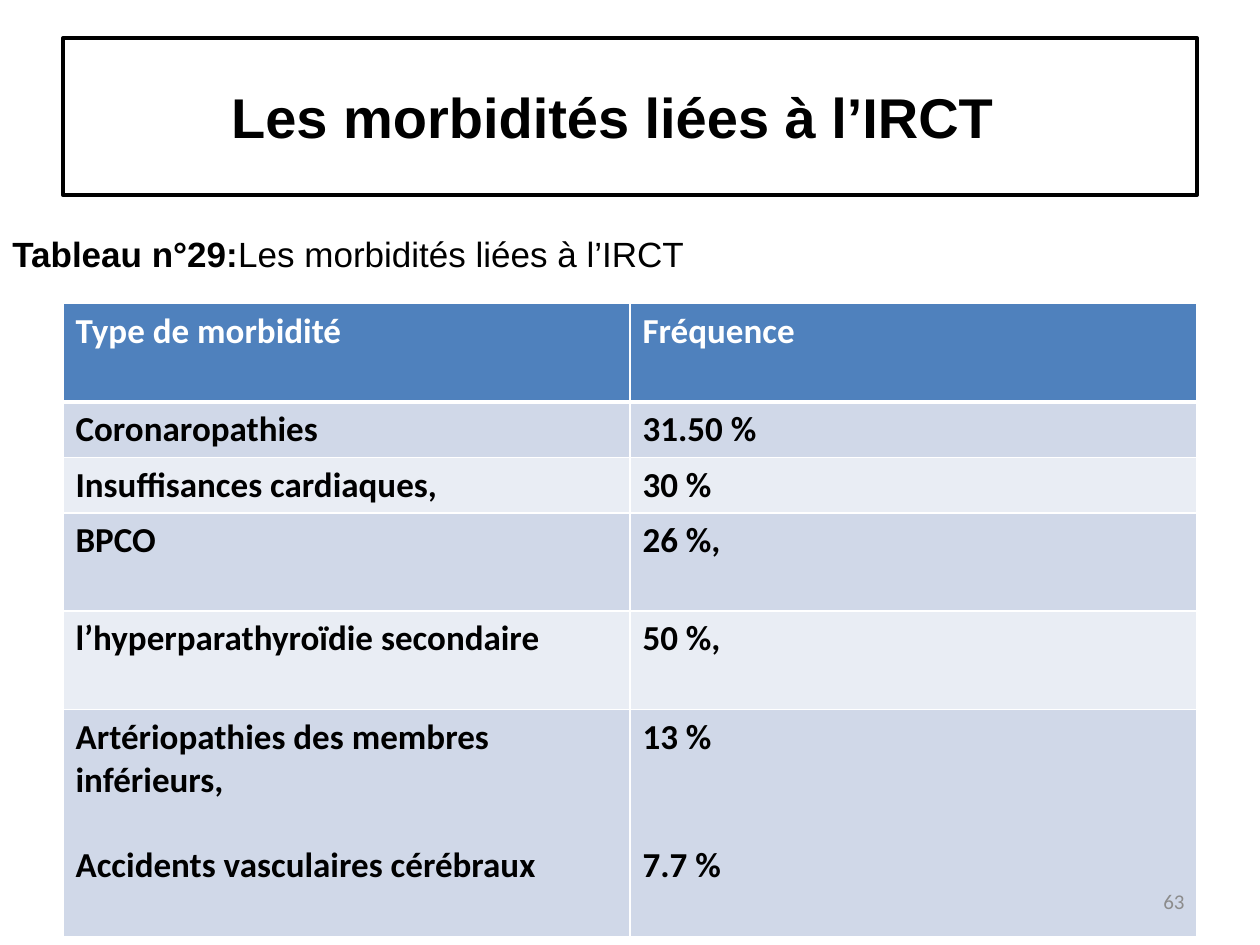
"""Build the slide on morbidities linked to end-stage renal disease."""
from lxml import etree
from pptx import Presentation
from pptx import util as u
from pptx.dml.color import RGBColor
from pptx.enum import shapes, text
from pptx.oxml.ns import qn

BLACK = RGBColor(0, 0, 0)
WHITE = RGBColor(255, 255, 255)
GREY = RGBColor(0x8C, 0x8C, 0x8C)
HEADER = RGBColor(0x4F, 0x81, 0xBD)
BANDS = [RGBColor(0xE9, 0xED, 0xF4), RGBColor(0xD0, 0xD8, 0xE8)]
LINE = 24.4

ROWS = [
    (0.78, ["Type de morbidité"], ["Fréquence"]),
    (0.44, ["Coronaropathies"], ["31.50 %"]),
    (0.44, ["Insuffisances cardiaques,"], ["30 %"]),
    (0.78, ["BPCO"], ["26 %,"]),
    (0.78, ["l’hyperparathyroïdie secondaire"], ["50 %,"]),
    (1.8, ["Artériopathies des membres inférieurs,",
           "Accidents vasculaires cérébraux"], ["13 %", "7.7 %"]),
]
GAPS = [LINE, 2 * LINE]


def add_run(p, words, size, font, color, bold=False):
    r = p.add_run()
    r.text = words
    r.font.size = u.Pt(size)
    r.font.name = font
    r.font.color.rgb = color
    r.font.bold = bold


def add_text(s, box, anchor, align, runs):
    sp = s.shapes.add_textbox(*map(u.Inches, box))
    tf = sp.text_frame
    tf.word_wrap = True
    tf.vertical_anchor = anchor
    p = tf.paragraphs[0]
    p.alignment = align
    for run in runs:
        add_run(p, *run)


def add_title(s, words):
    sp = s.shapes.add_shape(shapes.MSO_SHAPE.RECTANGLE, u.Inches(0.5),
                            u.Inches(0.3), u.Inches(9), u.Inches(1.25))
    sp.shadow.inherit = False
    sp.fill.solid()
    sp.fill.fore_color.rgb = WHITE
    sp.line.color.rgb = BLACK
    sp.line.width = u.Pt(2)
    tf = sp.text_frame
    tf.word_wrap = True
    tf.margin_right = u.Inches(0.37)
    tf.vertical_anchor = text.MSO_ANCHOR.MIDDLE
    p = tf.paragraphs[0]
    p.alignment = text.PP_ALIGN.CENTER
    add_run(p, words, 32, "Arial", BLACK, True)


def set_borders(cell, widths):
    tc_pr = cell._tc.get_or_add_tcPr()
    for side, width in zip("LRTB", widths):
        ln = etree.SubElement(tc_pr, qn(f"a:ln{side}"), w=str(u.Pt(width)))
        fill = etree.SubElement(ln, qn("a:solidFill"))
        etree.SubElement(fill, qn("a:srgbClr"), val=str(WHITE))


def fill_cell(cell, lines, row, gap):
    set_borders(cell, (1, 1, 3 if row == 1 else 1, 3 if row == 0 else 1))
    cell.fill.solid()
    cell.fill.fore_color.rgb = BANDS[row % 2] if row else HEADER
    tf = cell.text_frame
    for i, words in enumerate(lines):
        p = tf.add_paragraph() if i else tf.paragraphs[0]
        if i:
            p.space_before = u.Pt(gap)
        add_run(p, words, 20, "Calibri", BLACK if row else WHITE, True)


def add_morbidity_table(s):
    height = sum(row[0] for row in ROWS)
    table = s.shapes.add_table(len(ROWS), 2, u.Inches(0.5), u.Inches(2.41),
                               u.Inches(9), u.Inches(height)).table
    for i, (row_height, *cells) in enumerate(ROWS):
        table.rows[i].height = u.Inches(row_height)
        for j, lines in enumerate(cells):
            fill_cell(table.cell(i, j), lines, i, GAPS[j])


def main():
    prs = Presentation()
    prs.slide_width, prs.slide_height = u.Inches(10), u.Inches(7.5)
    s = prs.slides.add_slide(prs.slide_layouts[6])
    add_title(s, "Les morbidités liées à l’IRCT")
    add_morbidity_table(s)
    add_text(s, (0, 1.8, 10.23, 0.77), text.MSO_ANCHOR.TOP, text.PP_ALIGN.LEFT,
             [("Tableau n°29:", 20, "Arial", BLACK, True),
              ("Les morbidités liées à l’IRCT", 20, "Arial", BLACK)])
    add_text(s, (7.17, 6.95, 2.33, 0.4), text.MSO_ANCHOR.MIDDLE,
             text.PP_ALIGN.RIGHT, [("63", 12, "Calibri", GREY)])
    prs.save("out.pptx")


if __name__ == "__main__":
    main()
